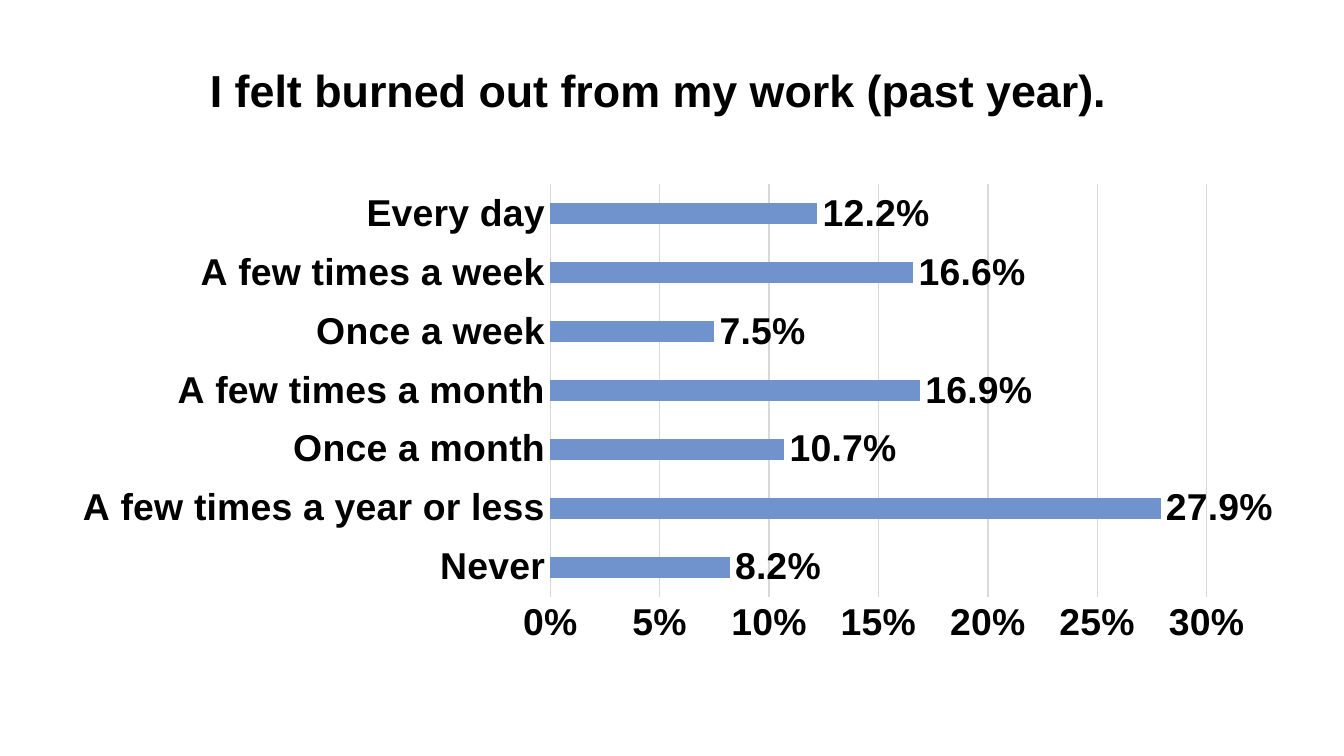
"""Build a slide with a bar chart of how often people felt burned out."""
from lxml import etree
from pptx import Presentation
from pptx import util as u
from pptx.chart.data import CategoryChartData
from pptx.dml.color import RGBColor
from pptx.enum import chart as c
from pptx.enum import text
from pptx.oxml.ns import qn

BLACK = RGBColor(0x00, 0x00, 0x00)
BLUE = RGBColor(0x70, 0x93, 0xCD)
GRAY = RGBColor(0xD9, 0xD9, 0xD9)
ANSWERS = {
    "Never": 0.082,
    "A few times a year or less": 0.279,
    "Once a month": 0.107,
    "A few times a month": 0.169,
    "Once a week": 0.075,
    "A few times a week": 0.166,
    "Every day": 0.122,
}
PLOT_LAYOUT = {"layoutTarget": "inner", "xMode": "edge", "yMode": "edge",
               "x": 0.4, "y": 0.02, "w": 0.54, "h": 0.86}


def style_font(font, size):
    font.name = "Arial"
    font.size = u.Pt(size)
    font.bold = True
    font.color.rgb = BLACK


deck = Presentation()
deck.slide_width, deck.slide_height = u.Pt(720), u.Pt(405)
page = deck.slides.add_slide(deck.slide_layouts[5])

title = page.shapes.title
title.left, title.top = u.Pt(34.5), u.Pt(20)
title.width, title.height = u.Pt(636), u.Pt(46)
title.text_frame.text = "I felt burned out from my work (past year)."
title.text_frame.vertical_anchor = text.MSO_ANCHOR.BOTTOM
para = title.text_frame.paragraphs[0]
para.alignment = text.PP_ALIGN.CENTER
style_font(para.runs[0].font, 24)

data = CategoryChartData(number_format="0.0%")
data.categories = list(ANSWERS)
data.add_series("Series 1", list(ANSWERS.values()))
chart = page.shapes.add_chart(
    c.XL_CHART_TYPE.BAR_CLUSTERED, u.Pt(34.5), u.Pt(93.6), u.Pt(651), u.Pt(257), data
).chart
chart.has_legend = False
chart.has_title = False
style_font(chart.font, 20)

for axis in (chart.category_axis, chart.value_axis):
    axis.major_tick_mark = c.XL_TICK_MARK.NONE
    axis.minor_tick_mark = c.XL_TICK_MARK.NONE
    style_font(axis.tick_labels.font, 20)

values = chart.value_axis
values.minimum_scale, values.maximum_scale, values.major_unit = 0, 0.3, 0.05
values.tick_labels.number_format = "0%"
values.tick_labels.number_format_is_linked = False
values.has_major_gridlines = True
values.format.line.fill.background()
for line in (chart.category_axis.format.line, values.major_gridlines.format.line):
    line.color.rgb = GRAY
    line.width = u.Pt(0.75)

plot = chart.plots[0]
plot.gap_width = 182
plot.vary_by_categories = False
series = plot.series[0]
series.format.fill.solid()
series.format.fill.fore_color.rgb = BLUE
labels = series.data_labels
labels.show_value = True
labels.number_format = "0.0%"
labels.number_format_is_linked = False
labels.position = c.XL_LABEL_POSITION.OUTSIDE_END
style_font(labels.font, 20)

area = chart.element.find(".//" + qn("c:plotArea"))
for layout in area.findall(qn("c:layout")):
    area.remove(layout)
layout = etree.Element(qn("c:layout"))
area.insert(0, layout)
manual = etree.SubElement(layout, qn("c:manualLayout"))
for name, value in PLOT_LAYOUT.items():
    etree.SubElement(manual, qn("c:" + name)).set("val", str(value))

deck.save("out.pptx")
